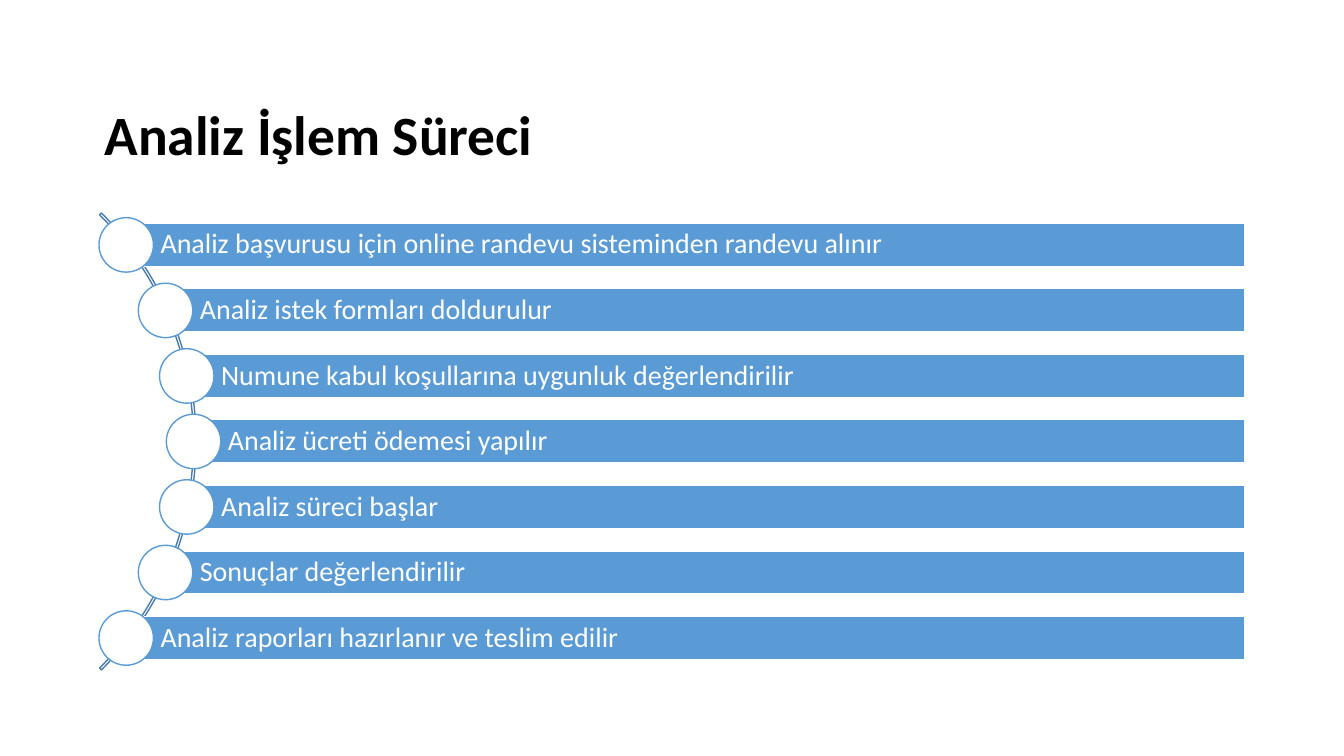
from math import sqrt

from pptx import Presentation
from pptx.dml.color import RGBColor
from pptx.enum import shapes, text
from pptx.util import Inches, Pt

HUES = {"bar": "5B9BD5", "arc": "497CAB", "white": "FFFFFF", "black": "000000"}
STEPS = [
    "Analiz başvurusu için online randevu sisteminden randevu alınır",
    "Analiz istek formları doldurulur",
    "Numune kabul koşullarına uygunluk değerlendirilir",
    "Analiz ücreti ödemesi yapılır",
    "Analiz süreci başlar",
    "Sonuçlar değerlendirilir",
    "Analiz raporları hazırlanır ve teslim edilir",
]
KIND = shapes.MSO_SHAPE

prs = Presentation()
prs.slide_width, prs.slide_height = Inches(13.33), Inches(7.5)
slide = prs.slides.add_slide(prs.slide_layouts[6])


def draw(kind, x, y, w, h, fill, line):
    shape = slide.shapes.add_shape(kind, Inches(x), Inches(y), Inches(w), Inches(h))
    shape.shadow.inherit = False
    if fill:
        shape.fill.solid()
        shape.fill.fore_color.rgb = RGBColor.from_string(HUES[fill])
    else:
        shape.fill.background()
    shape.line.color.rgb = RGBColor.from_string(HUES[line])
    shape.line.width = Pt(1)
    return shape


def write(shape, words, size, hue, bold=False):
    frame = shape.text_frame
    frame.word_wrap = True
    frame.vertical_anchor = text.MSO_ANCHOR.MIDDLE
    para = frame.paragraphs[0]
    para.alignment = text.PP_ALIGN.LEFT
    para.line_spacing = 0.9
    run = para.add_run()
    run.text = words
    run.font.name = "Calibri"
    run.font.size = Pt(size)
    run.font.bold = bold
    run.font.color.rgb = RGBColor.from_string(HUES[hue])
    return frame


title = slide.shapes.add_textbox(Inches(0.94), Inches(1.1), Inches(11.5), Inches(0.53))
write(title, "Analiz İşlem Süreci", 39.6, "black", True)

# Arc that carries the steps
mid_x, mid_y, size = -1.26, 4.38, 6.41
arc = draw(KIND.BLOCK_ARC, mid_x - size / 2, mid_y - size / 2, size, size, None, "arc")
for i, value in enumerate((189, 27, 0.004)):
    arc.adjustments[i] = value

# Bars start at the centres of dots spaced evenly down the arc
radius, pitch, right = 3.18, 0.65, 12.35
tall, dot = 0.43, 0.54
for i, step in enumerate(STEPS):
    drop = (i - len(STEPS) // 2) * pitch
    x = mid_x + sqrt(radius ** 2 - drop ** 2)
    y = mid_y + drop
    bar = draw(KIND.RECTANGLE, x, y - tall / 2, right - x, tall, "bar", "white")
    frame = write(bar, step, 20, "white")
    frame.margin_left = Inches(0.34)
    frame.margin_right = frame.margin_top = frame.margin_bottom = Inches(0.06)
    draw(KIND.OVAL, x - dot / 2, y - dot / 2, dot, dot, "white", "bar")

prs.save("out.pptx")
